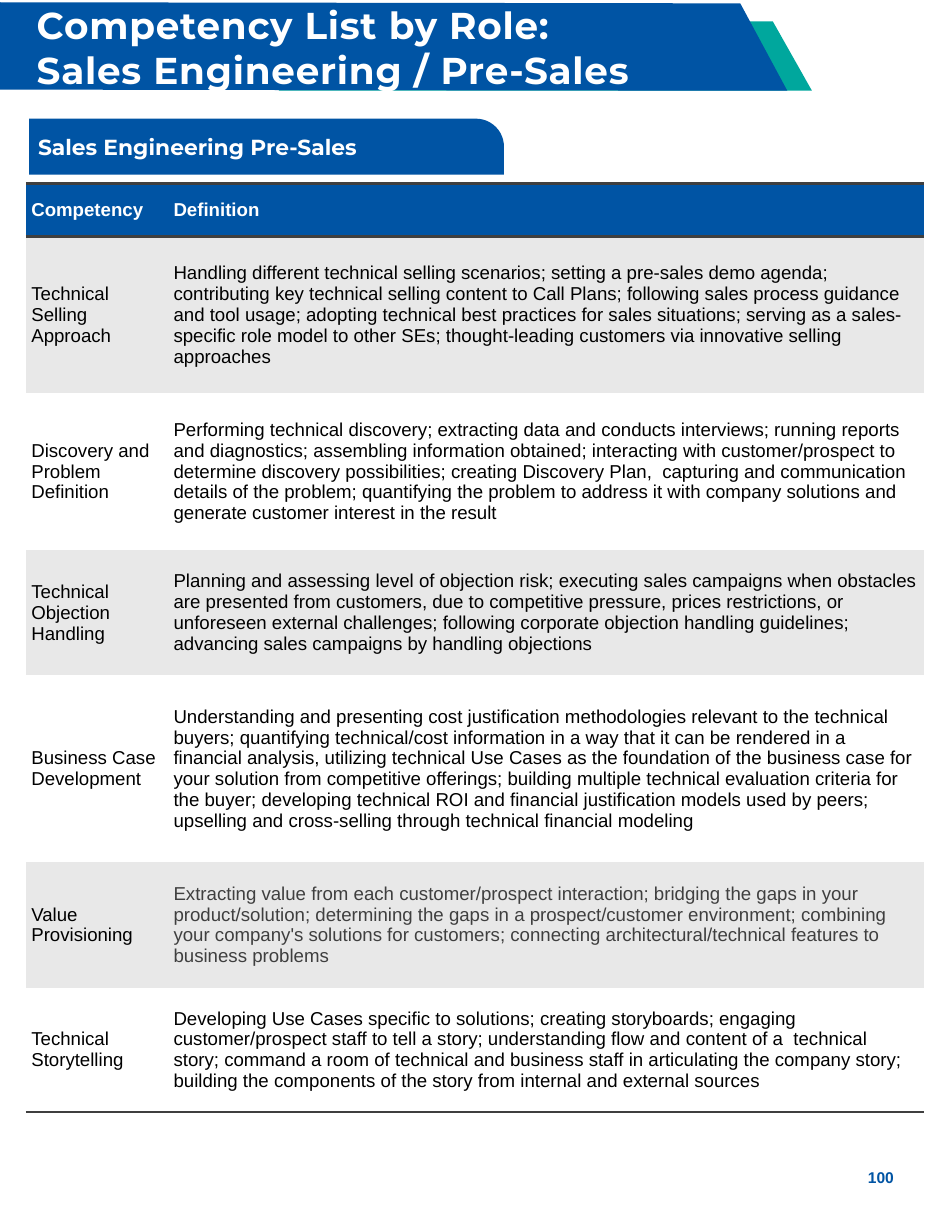
from typing import NamedTuple

from lxml.etree import SubElement
from pptx import Presentation
from pptx.dml.color import RGBColor
from pptx.enum.shapes import MSO_SHAPE
from pptx.enum.text import MSO_ANCHOR, PP_ALIGN
from pptx.oxml.ns import qn
from pptx.util import Inches, Pt

BLUE = RGBColor(0x00, 0x54, 0xA4)
TEAL = RGBColor(0x00, 0xA7, 0x9D)
WHITE = RGBColor(0xFF, 0xFF, 0xFF)
BLACK = RGBColor(0x00, 0x00, 0x00)
DARK = RGBColor(0x3F, 0x3F, 0x3F)
GREY = RGBColor(0xE8, 0xE8, 0xE8)


class Skill(NamedTuple):
    name: str
    text: str
    height: float
    color: RGBColor = BLACK


SKILLS = [
    Skill("Technical Selling Approach",
          "Handling different technical selling scenarios; setting a pre-sales demo agenda; "
          "contributing key technical selling content to Call Plans; following sales process "
          "guidance and tool usage; adopting technical best practices for sales situations; "
          "serving as a sales-specific role model to other SEs; thought-leading customers via "
          "innovative selling approaches", 1.4),
    Skill("Discovery and Problem Definition",
          "Performing technical discovery; extracting data and conducts interviews; running "
          "reports and diagnostics; assembling information obtained; interacting with "
          "customer/prospect to determine discovery possibilities; creating Discovery Plan,  "
          "capturing and communication details of the problem; quantifying the problem to "
          "address it with company solutions and generate customer interest in the result", 1.4),
    Skill("Technical Objection Handling",
          "Planning and assessing level of objection risk; executing sales campaigns when "
          "obstacles are presented from customers, due to competitive pressure, prices "
          "restrictions, or unforeseen external challenges; following corporate objection "
          "handling guidelines; advancing sales campaigns by handling objections", 1.12),
    Skill("Business Case Development",
          "Understanding and presenting cost justification methodologies relevant to the "
          "technical buyers; quantifying technical/cost information in a way that it can be "
          "rendered in a financial analysis, utilizing technical Use Cases as the foundation of "
          "the business case for your solution from competitive offerings; building multiple "
          "technical evaluation criteria for the buyer; developing technical ROI and financial "
          "justification models used by peers; upselling and cross-selling through technical "
          "financial modeling", 1.67),
    Skill("Value Provisioning",
          "Extracting value from each customer/prospect interaction; bridging the gaps in your "
          "product/solution; determining the gaps in a prospect/customer environment; combining "
          "your company's solutions for customers; connecting architectural/technical features "
          "to business problems", 1.12, DARK),
    Skill("Technical Storytelling",
          "Developing Use Cases specific to solutions; creating storyboards; engaging "
          "customer/prospect staff to tell a story; understanding flow and content of a  "
          "technical story; command a room of technical and business staff in articulating the "
          "company story; building the components of the story from internal and external "
          "sources", 1.11),
]


def write(frame, text: str, *, size: float = 12, font: str = "Arial",
          color: RGBColor = BLACK, bold: bool = False, align=PP_ALIGN.LEFT,
          space: float = 0) -> None:
    """Fill a text frame; a vertical tab in the text breaks the line."""
    frame.word_wrap = True
    para = frame.paragraphs[0]
    para.text = text
    para.alignment = align
    for run in para.runs:
        run.font.size = Pt(size)
        run.font.name = font
        run.font.bold = bold
        run.font.color.rgb = color
        if space:
            run.font._element.set("spc", str(int(space * 100)))


def paint(shape, color: RGBColor) -> None:
    shape.shadow.inherit = False
    shape.fill.solid()
    shape.fill.fore_color.rgb = color
    shape.line.fill.background()


def banner(slide, points: list[tuple[float, float]], color: RGBColor) -> None:
    first, *rest = [(Inches(x), Inches(y)) for x, y in points]
    form = slide.shapes.build_freeform(*first)
    form.add_line_segments(rest, close=True)
    paint(form.convert_to_shape(), color)


def border(cell, sides: str) -> None:
    """Rule the named sides (T, B) of a cell and clear the others."""
    props = cell._tc.get_or_add_tcPr()
    for side in "LRTB":
        line = SubElement(props, qn(f"a:ln{side}"))
        if side in sides:
            line.set("w", str(Pt(2)))
            fill = SubElement(line, qn("a:solidFill"))
            SubElement(fill, qn("a:srgbClr")).set("val", str(DARK))
        else:
            SubElement(line, qn("a:noFill"))


def fill_cell(cell, text: str, back: RGBColor, sides: str, color: RGBColor,
              bold: bool = False) -> None:
    cell.margin_left = cell.margin_right = Inches(0.05)
    cell.margin_top = cell.margin_bottom = Inches(0.05)
    cell.vertical_anchor = MSO_ANCHOR.MIDDLE
    border(cell, sides)
    cell.fill.solid()
    cell.fill.fore_color.rgb = back
    write(cell.text_frame, text, color=color, bold=bold)


def draw_table(slide) -> None:
    heights = [0.47] + [skill.height for skill in SKILLS]
    table = slide.shapes.add_table(
        len(heights), 2, Inches(0.23), Inches(1.64), Inches(8.02),
        Inches(sum(heights))).table
    table.horz_banding = False
    for col, width in zip(table.columns, (1.27, 6.75)):
        col.width = Inches(width)
    for row, height in zip(table.rows, heights):
        row.height = Inches(height)
    for col, head in enumerate(("Competency", "Definition")):
        fill_cell(table.cell(0, col), head, BLUE, "TB", WHITE, bold=True)
    for row, skill in enumerate(SKILLS, 1):
        back = GREY if row % 2 else WHITE
        sides = {1: "T", len(SKILLS): "B"}.get(row, "")
        fill_cell(table.cell(row, 0), skill.name, back, sides, BLACK)
        fill_cell(table.cell(row, 1), skill.text, back, sides, skill.color)


def main() -> None:
    deck = Presentation()
    deck.slide_width, deck.slide_height = Inches(8.5), Inches(11)
    slide = deck.slides.add_slide(deck.slide_layouts[6])

    banner(slide, [(2.49, 0.21), (6.9, 0.19), (7.25, 0.81), (2.49, 0.81)], TEAL)
    banner(slide, [(0, 0.02), (6.61, 0.03), (7.03, 0.81), (0, 0.8)], BLUE)

    title = slide.shapes.add_textbox(
        Inches(0.23), Inches(0.18), Inches(6.1), Inches(0.48)).text_frame
    title.vertical_anchor = MSO_ANCHOR.MIDDLE
    write(title, "Competency List by Role:\vSales Engineering / Pre-Sales",
          size=24, font="Montserrat", color=WHITE, bold=True, space=0.5)

    draw_table(slide)

    tab = slide.shapes.add_shape(
        MSO_SHAPE.ROUND_1_RECTANGLE, Inches(0.26), Inches(1.06), Inches(4.24), Inches(0.5))
    tab.adjustments[0] = 0.5
    paint(tab, BLUE)
    label = tab.text_frame
    label.margin_left = label.margin_right = Inches(0.08)
    label.margin_top = label.margin_bottom = Inches(0.08)
    label.vertical_anchor = MSO_ANCHOR.MIDDLE
    write(label, "Sales Engineering Pre-Sales", size=14, font="Montserrat",
          color=WHITE, bold=True)

    page = slide.shapes.add_textbox(
        Inches(7.56), Inches(10.38), Inches(0.61), Inches(0.28))
    write(page.text_frame, "100", size=10, color=BLUE, bold=True, align=PP_ALIGN.CENTER)

    deck.save("out.pptx")


if __name__ == "__main__":
    main()
